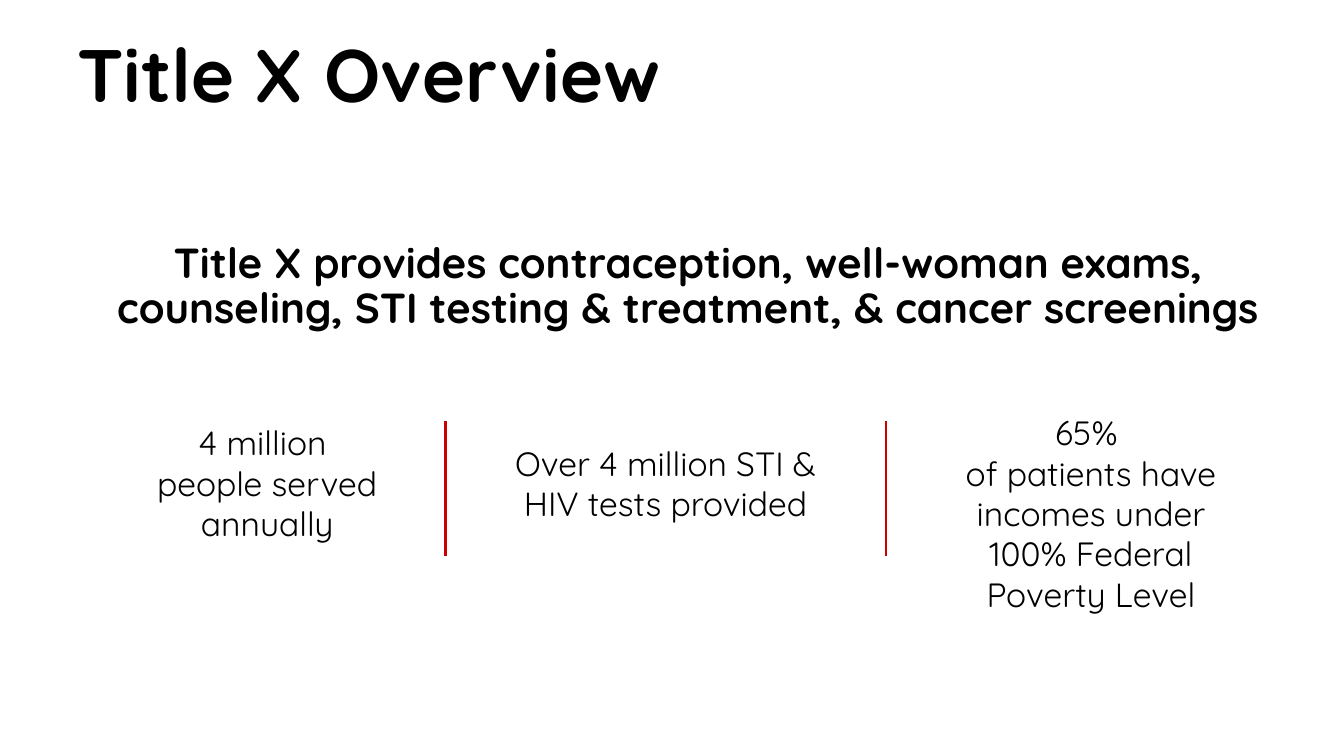
from lxml import etree
from pptx import Presentation
from pptx.dml.color import RGBColor
from pptx.enum.shapes import MSO_CONNECTOR as Connector
from pptx.enum.text import MSO_ANCHOR as Anchor, PP_ALIGN as Align
from pptx.oxml.ns import qn
from pptx.util import Inches, Pt

COLORS = {"text": "000000", "divider": "CC0000", "background": "FFFFFF"}


class SlideBuilder:
    """Hold the slide and its style, and add text and dividers."""

    font_name = "Quicksand"

    def __init__(self, slide):
        self.slide = slide
        fill = slide.background.fill
        fill.solid()
        fill.fore_color.rgb = self.color("background")

    def color(self, name):
        return RGBColor.from_string(COLORS[name])

    def add_text(self, box, lines, size, bold=False, align=Align.CENTER, anchor=Anchor.TOP,
                 top_inset=0.05, bottom_inset=0.05, indent=0, spacing=1.0):
        shape = self.slide.shapes.add_textbox(*map(Inches, box))
        frame = shape.text_frame
        frame.word_wrap = True
        frame.vertical_anchor = anchor
        frame.margin_left = frame.margin_right = Inches(0.1)
        frame.margin_top = Inches(top_inset)
        frame.margin_bottom = Inches(bottom_inset)
        frame.text = "\n".join(lines)
        for paragraph in frame.paragraphs:
            paragraph.alignment = align
            paragraph.line_spacing = spacing
            paragraph._p.get_or_add_pPr().set("marL", str(Inches(indent)))
            for run in paragraph.runs:
                run.font.name = self.font_name
                run.font.size = Pt(size)
                run.font.bold = bold
                run.font.color.rgb = self.color("text")

    def add_divider(self, left, top, bottom):
        line = self.slide.shapes.add_connector(
            Connector.STRAIGHT, Inches(left), Inches(top), Inches(left), Inches(bottom))
        line.line.color.rgb = self.color("divider")
        line.line.width = Pt(1.75)
        etree.SubElement(line._element.spPr, qn("a:effectLst"))


def main():
    presentation = Presentation()
    presentation.slide_width = Inches(13.33)
    presentation.slide_height = Inches(7.5)
    builder = SlideBuilder(presentation.slides.add_slide(presentation.slide_layouts[6]))

    builder.add_text((0.67, 0.33, 12, 1.25), ["Title X Overview"], 53, bold=True,
                     align=Align.LEFT, spacing=0.9)
    services = ("Title X provides contraception, well-woman exams, "
                "counseling, STI testing & treatment, & cancer screenings")
    builder.add_text((0.77, 2.12, 12, 1.52), [services], 30, bold=True, anchor=Anchor.BOTTOM,
                     bottom_inset=0.34, indent=0.11, spacing=0.9)

    statistics = [
        (1.01, 4.09, 1.52, 0, ["4 million ", "people served annually"]),
        (4.96, 4.29, 1.13, 0, ["Over 4 million STI & HIV tests provided"]),
        (9.13, 3.99, 1.72, 0.1,
         ["65% ", "of patients have incomes under 100% Federal Poverty Level"]),
    ]
    for left, top, height, indent, lines in statistics:
        builder.add_text((left, top, 3.28, height), lines, 24,
                         top_inset=0.1, bottom_inset=0.1, indent=indent)
    for left in (4.42, 8.79):
        builder.add_divider(left, 4.18, 5.52)

    presentation.save("out.pptx")


if __name__ == "__main__":
    main()
